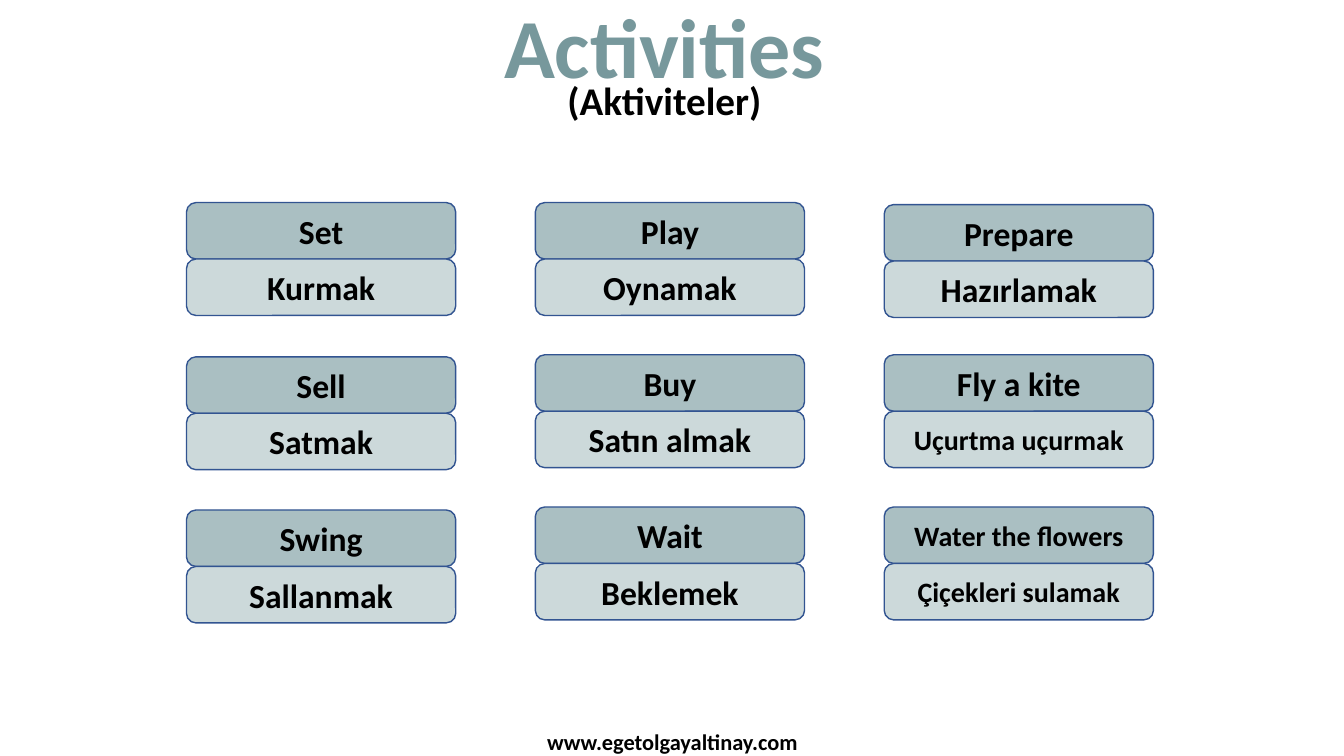
from dataclasses import dataclass

from pptx import Presentation
from pptx.dml.color import RGBColor
from pptx.enum.shapes import MSO_SHAPE
from pptx.enum.text import MSO_ANCHOR, MSO_AUTO_SIZE, PP_ALIGN
from pptx.util import Pt

PX = 9144


@dataclass(frozen=True)
class Theme:
    font: str = "Calibri"
    text: str = "000000"
    title: str = "77989C"
    english: str = "AABFC2"
    turkish: str = "CCD9DA"
    border: str = "325491"
    title_size: int = 60
    subtitle_size: int = 28
    card_size: int = 24
    long_size: int = 20
    footer_size: int = 16


THEME = Theme()

LEFT, COLUMN_STEP = 185, 346
CARD_W, CARD_H = 267, 56
LONG_TEXT = 12

COLUMNS = [
    [(201, "Set", "Kurmak"), (354, "Sell", "Satmak"), (506, "Swing", "Sallanmak")],
    [(201, "Play", "Oynamak"), (352, "Buy", "Satın almak"), (503, "Wait", "Beklemek")],
    [
        (203, "Prepare", "Hazırlamak"),
        (352, "Fly a kite", "Uçurtma uçurmak"),
        (503, "Water the flowers", "Çiçekleri sulamak"),
    ],
]


def px(*values):
    return [value * PX for value in values]


def rgb(value):
    return RGBColor.from_string(value)


def write(tf, text, size, color=THEME.text, anchor=MSO_ANCHOR.TOP):
    tf.word_wrap = True
    tf.vertical_anchor = anchor
    p = tf.paragraphs[0]
    p.alignment = PP_ALIGN.CENTER
    r = p.add_run()
    r.text = text
    r.font.name = THEME.font
    r.font.size = Pt(size)
    r.font.bold = True
    r.font.color.rgb = rgb(color)


def add_label(slide, box, text, **fmt):
    tf = slide.shapes.add_textbox(*px(*box)).text_frame
    write(tf, text, **fmt)
    tf.auto_size = MSO_AUTO_SIZE.SHAPE_TO_FIT_TEXT


def add_plate(slide, left, top, text, fill):
    sp = slide.shapes.add_shape(
        MSO_SHAPE.ROUNDED_RECTANGLE, *px(left, top, CARD_W, CARD_H)
    )
    sp.shadow.inherit = False
    sp.fill.solid()
    sp.fill.fore_color.rgb = rgb(fill)
    sp.line.color.rgb = rgb(THEME.border)
    sp.line.width = Pt(1)
    size = THEME.long_size if len(text) > LONG_TEXT else THEME.card_size
    write(sp.text_frame, text, size=size, anchor=MSO_ANCHOR.MIDDLE)


def add_card(slide, left, top, english, turkish):
    add_plate(slide, left, top, english, THEME.english)
    add_plate(slide, left, top + CARD_H, turkish, THEME.turkish)


def main():
    prs = Presentation()
    prs.slide_width, prs.slide_height = px(1333, 750)
    slide = prs.slides.add_slide(prs.slide_layouts[6])

    for column, cards in enumerate(COLUMNS):
        for top, english, turkish in cards:
            add_card(slide, LEFT + column * COLUMN_STEP, top, english, turkish)

    add_label(slide, (19, -10, 1280, 111), "Activities",
              size=THEME.title_size, color=THEME.title)
    add_label(slide, (141, 71, 1036, 57), "(Aktiviteler)", size=THEME.subtitle_size)
    add_label(slide, (392, 717, 550, 37), "www.egetolgayaltinay.com",
              size=THEME.footer_size)

    prs.save("out.pptx")


if __name__ == "__main__":
    main()
